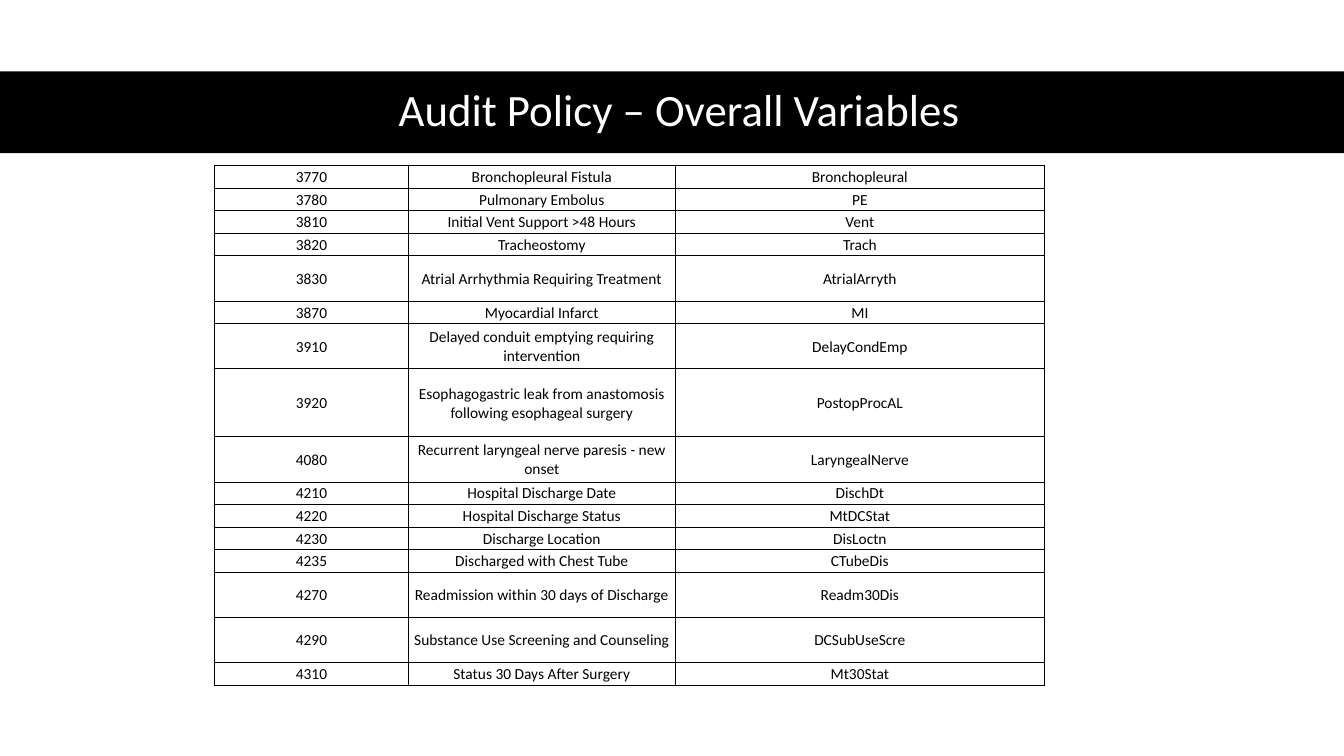
from dataclasses import dataclass

from lxml import etree
from pptx import Presentation
from pptx.dml.color import RGBColor
from pptx.enum.shapes import MSO_SHAPE
from pptx.enum.text import MSO_ANCHOR, PP_ALIGN
from pptx.oxml.ns import qn
from pptx.slide import Slide
from pptx.table import _Cell
from pptx.text.text import _Paragraph
from pptx.util import Cm, Pt

RECTANGLE = MSO_SHAPE.RECTANGLE
MIDDLE = MSO_ANCHOR.MIDDLE
CENTER = PP_ALIGN.CENTER


@dataclass(frozen=True)
class Theme:
    font: str = "Calibri"
    ink: str = "000000"
    paper: str = "FFFFFF"
    title_size: float = 32
    cell_size: float = 11
    border_width: float = 0.5


@dataclass(frozen=True)
class Variable:
    sequence: str
    label: str
    short_name: str
    lines: int = 1

    def cells(self) -> tuple[str, str, str]:
        return self.sequence, self.label, self.short_name


THEME = Theme()
PAGE_WIDTH, PAGE_HEIGHT = Cm(33.87), Cm(19.05)
BAND_HEIGHT = Cm(2.06)
TABLE_LEFT, TABLE_TOP = Cm(5.41), Cm(4.17)
COLUMN_WIDTHS = (Cm(4.88), Cm(6.73), Cm(9.3))
LINE_HEIGHT = Cm(0.57)
CELL_INSET = Cm(0.03)

VARIABLES = (
    Variable("3770", "Bronchopleural Fistula", "Bronchopleural"),
    Variable("3780", "Pulmonary Embolus", "PE"),
    Variable("3810", "Initial Vent Support >48 Hours", "Vent"),
    Variable("3820", "Tracheostomy", "Trach"),
    Variable("3830", "Atrial Arrhythmia Requiring Treatment", "AtrialArryth", 2),
    Variable("3870", "Myocardial Infarct", "MI"),
    Variable("3910", "Delayed conduit emptying requiring intervention", "DelayCondEmp", 2),
    Variable("3920", "Esophagogastric leak from anastomosis following esophageal surgery",
             "PostopProcAL", 3),
    Variable("4080", "Recurrent laryngeal nerve paresis - new onset", "LaryngealNerve", 2),
    Variable("4210", "Hospital Discharge Date", "DischDt"),
    Variable("4220", "Hospital Discharge Status", "MtDCStat"),
    Variable("4230", "Discharge Location", "DisLoctn"),
    Variable("4235", "Discharged with Chest Tube", "CTubeDis"),
    Variable("4270", "Readmission within 30 days of Discharge", "Readm30Dis", 2),
    Variable("4290", "Substance Use Screening and Counseling", "DCSubUseScre", 2),
    Variable("4310", "Status 30 Days After Surgery", "Mt30Stat"),
)


def write_centered(para: _Paragraph, text: str, size: float, color: str) -> None:
    para.text = text
    para.alignment = CENTER
    para.font.name = THEME.font
    para.font.size = Pt(size)
    para.font.color.rgb = RGBColor.from_string(color)


def add_title_band(page: Slide, text: str) -> None:
    band = page.shapes.add_shape(RECTANGLE, 0, Cm(1.8), PAGE_WIDTH, BAND_HEIGHT)
    band.shadow.inherit = False
    band.fill.solid()
    band.fill.fore_color.rgb = RGBColor.from_string(THEME.ink)
    band.line.fill.background()

    box = page.shapes.add_textbox(Cm(1.55), Cm(1.78), Cm(31.14), BAND_HEIGHT)
    frame = box.text_frame
    frame.word_wrap = True
    frame.vertical_anchor = MIDDLE
    para = frame.paragraphs[0]
    write_centered(para, text, THEME.title_size, THEME.paper)
    para.line_spacing = 0.9


def add_borders(cell: _Cell) -> None:
    properties = cell._tc.get_or_add_tcPr()
    for side in ("a:lnL", "a:lnR", "a:lnT", "a:lnB"):
        line = etree.SubElement(properties, qn(side), w=str(Pt(THEME.border_width)))
        fill = etree.SubElement(line, qn("a:solidFill"))
        etree.SubElement(fill, qn("a:srgbClr"), val=THEME.ink)


def fill_cell(cell: _Cell, text: str) -> None:
    add_borders(cell)
    cell.fill.background()
    cell.vertical_anchor = MIDDLE
    cell.margin_left = cell.margin_right = cell.margin_top = CELL_INSET
    cell.margin_bottom = 0
    write_centered(cell.text_frame.paragraphs[0], text, THEME.cell_size, THEME.ink)


def add_variable_table(page: Slide, variables: tuple[Variable, ...]) -> None:
    """Draw one row per variable, its height a multiple of the line height."""
    height = LINE_HEIGHT * sum(variable.lines for variable in variables)
    table = page.shapes.add_table(
        len(variables), len(COLUMN_WIDTHS), TABLE_LEFT, TABLE_TOP, sum(COLUMN_WIDTHS), height
    ).table
    table.first_row = False
    table.horz_banding = False
    for column, width in zip(table.columns, COLUMN_WIDTHS):
        column.width = width
    for row, variable in zip(table.rows, variables):
        row.height = LINE_HEIGHT * variable.lines
        for cell, text in zip(row.cells, variable.cells()):
            fill_cell(cell, text)


def main() -> None:
    deck = Presentation()
    deck.slide_width, deck.slide_height = PAGE_WIDTH, PAGE_HEIGHT
    page = deck.slides.add_slide(deck.slide_layouts[6])
    add_title_band(page, "Audit Policy – Overall Variables")
    add_variable_table(page, VARIABLES)
    deck.save("out.pptx")


if __name__ == "__main__":
    main()
